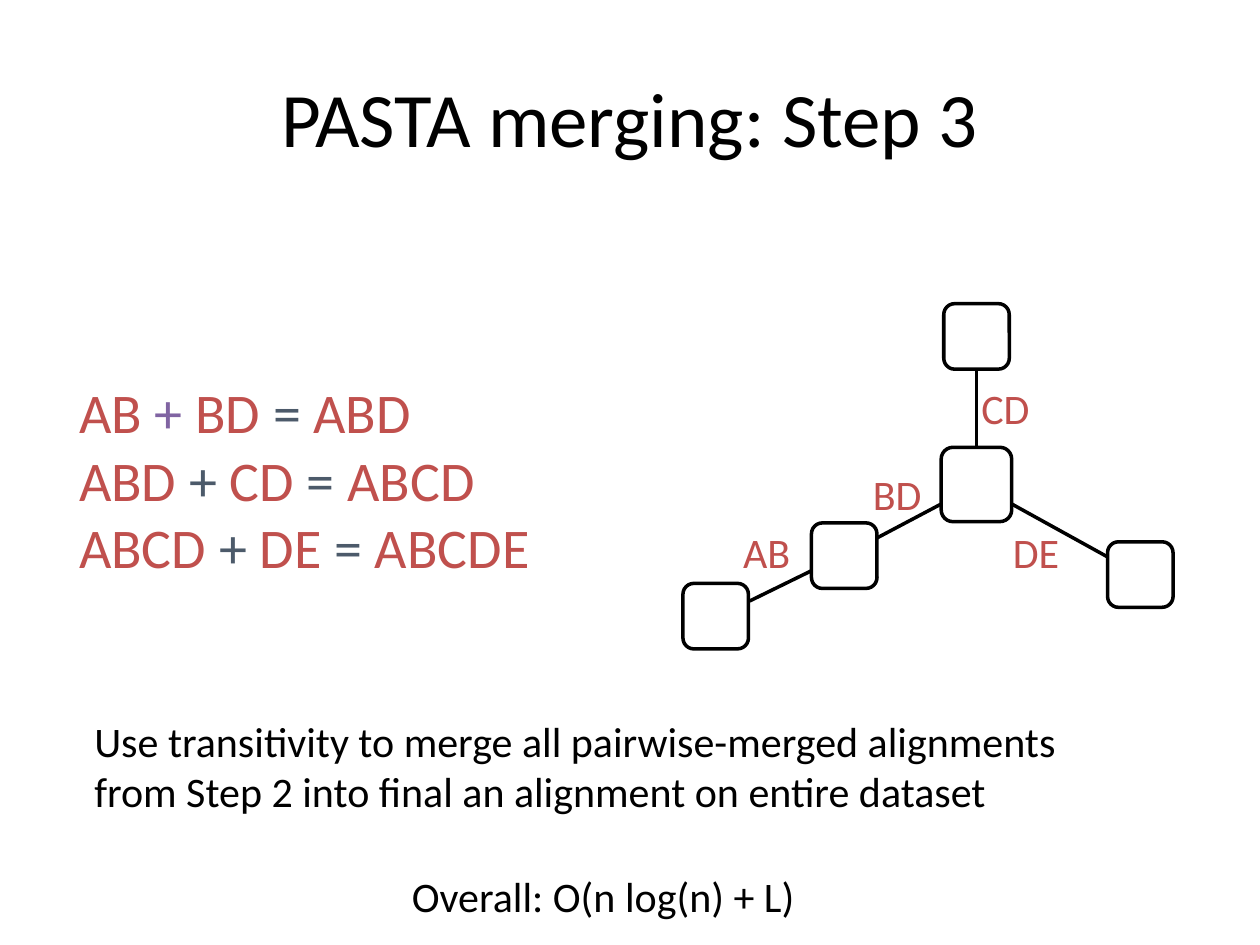
"""Build the slide on the third merging step: equations beside a spanning tree."""
from lxml import etree
from pptx import Presentation
from pptx.dml.color import RGBColor
from pptx.enum.shapes import MSO_CONNECTOR, MSO_SHAPE
from pptx.enum.text import MSO_ANCHOR, PP_ALIGN
from pptx.oxml.ns import qn
from pptx.util import Inches, Pt

STRAIGHT = MSO_CONNECTOR.STRAIGHT
ROUNDED = MSO_SHAPE.ROUNDED_RECTANGLE
MIDDLE = MSO_ANCHOR.MIDDLE
CENTER = PP_ALIGN.CENTER

BLACK = RGBColor(0x00, 0x00, 0x00)
WHITE = RGBColor(0xFF, 0xFF, 0xFF)
RED = RGBColor(0xC0, 0x50, 0x4D)
PURPLE = RGBColor(0x80, 0x64, 0xA2)
SLATE = RGBColor(0x4C, 0x5A, 0x6A)

FONT = "Calibri"
TOP, BOTTOM = 0, 2
LEAF_SIZE = (0.52, 0.52)
HUB_SIZE = (0.56, 0.59)

EQUATIONS = [
    ("AB", "BD", "ABD", PURPLE),
    ("ABD", "CD", "ABCD", SLATE),
    ("ABCD", "DE", "ABCDE", SLATE),
]
EDGE_LABELS = [
    ("AB", 5.8, 4.13),
    ("BD", 6.83, 3.67),
    ("CD", 7.69, 2.99),
    ("DE", 7.94, 4.13),
]
SLANTED_EDGES = [
    (7.47, 4, 6.96, 4.27),
    (8.03, 4, 8.79, 4.42),
    (6.44, 4.53, 5.95, 4.77),
]
LEAVES = [(8.79, 4.3), (6.44, 4.15), (5.42, 4.63)]


def add_run(paragraph, text, size, color):
    """Append one formatted run to a paragraph."""
    run = paragraph.add_run()
    run.text = text
    run.font.name = FONT
    run.font.size = Pt(size)
    run.font.color.rgb = color


def add_text(slide, box, lines, size, wrap=False):
    """Add a text box whose lines are lists of (text, color) runs."""
    frame = slide.shapes.add_textbox(*map(Inches, box)).text_frame
    frame.word_wrap = wrap
    for index, line in enumerate(lines):
        paragraph = frame.add_paragraph() if index else frame.paragraphs[0]
        for text, color in line:
            add_run(paragraph, text, size, color)


def add_title(slide, text):
    """Place and fill the title placeholder."""
    title = slide.shapes.title
    title.left, title.top, title.width, title.height = map(Inches, (0.5, 0.3, 9, 1.25))
    title.text_frame.vertical_anchor = MIDDLE
    paragraph = title.text_frame.paragraphs[0]
    paragraph.alignment = CENTER
    add_run(paragraph, text, 44, BLACK)


def add_node(slide, left, top, size=LEAF_SIZE):
    """Add a white rounded node of the tree."""
    node = slide.shapes.add_shape(ROUNDED, *map(Inches, (left, top, *size)))
    node.shadow.inherit = False
    node.fill.solid()
    node.fill.fore_color.rgb = WHITE
    node.line.color.rgb = BLACK
    node.line.width = Pt(2)
    return node


def add_edge(slide, x1, y1, x2, y2):
    """Add a straight black edge of the tree."""
    edge = slide.shapes.add_connector(STRAIGHT, *map(Inches, (x1, y1, x2, y2)))
    edge.line.color.rgb = BLACK
    edge.line.width = Pt(2)
    etree.SubElement(edge._element.spPr, qn("a:effectLst"))
    return edge


def add_tree(slide):
    """Draw the spanning tree with its edge labels."""
    for ends in SLANTED_EDGES:
        add_edge(slide, *ends)
    trunk = add_edge(slide, 7.75, 3.55, 7.75, 2.93)
    hub = add_node(slide, 7.47, 3.55, HUB_SIZE)
    top_leaf = add_node(slide, 7.49, 2.41)
    trunk.begin_connect(hub, TOP)
    trunk.end_connect(top_leaf, BOTTOM)
    for left, top in LEAVES:
        add_node(slide, left, top)
    for label, left, top in EDGE_LABELS:
        add_text(slide, (left, top, 0.67, 0.5), [[(label, RED)]], 24)


def add_equations(slide):
    """List the merges, with the operators in their own colors."""
    lines = [
        [(f"{first} ", RED), ("+", plus_color), (f" {second} ", RED),
         ("=", SLATE), (f" {merged}", RED)]
        for first, second, merged, plus_color in EQUATIONS
    ]
    add_text(slide, (0.53, 2.95, 5.72, 2.26), lines, 32, wrap=True)


def main():
    """Build and save the slide."""
    deck = Presentation()
    deck.slide_width, deck.slide_height = Inches(10), Inches(7.5)
    slide = deck.slides.add_slide(deck.slide_layouts[5])
    add_title(slide, "PASTA merging: Step 3")
    add_tree(slide)
    explanation = [
        [("Use transitivity to merge all pairwise-merged alignments", BLACK)],
        [("from Step 2 into final an alignment on entire dataset", BLACK)],
    ]
    add_text(slide, (0.65, 5.63, 8.55, 0.91), explanation, 24)
    add_equations(slide)
    add_text(slide, (3.17, 6.86, 3.65, 0.5), [[("Overall: O(n log(n) + L)", BLACK)]], 24)
    deck.save("out.pptx")


if __name__ == "__main__":
    main()
